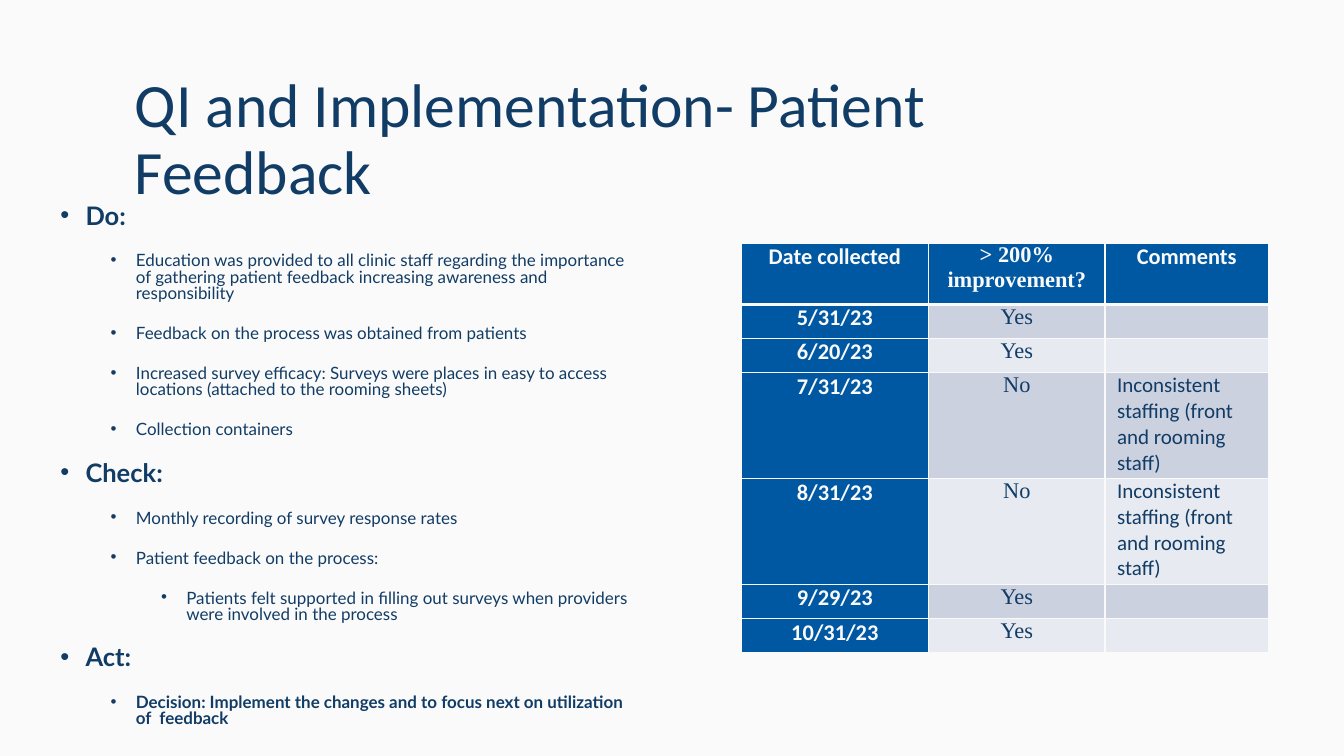
from lxml.etree import SubElement
from pptx import Presentation
from pptx.dml.color import RGBColor
from pptx.enum.text import MSO_ANCHOR as Anchor, PP_ALIGN as Align
from pptx.oxml.ns import qn
from pptx.util import Inches, Pt

NAVY, BLUE, PAPER = "113C66", "0058A3", "FAFAFA"
BANDS = ["CCD1E0", "E7EAF0"]
SANS, BODY, SERIF = "Calibri", "Lato", "Times New Roman"

TITLE = "QI and Implementation- Patient Feedback"
POINTS = [
    (1, "Do:", True),
    (2, "Education was provided to all clinic staff regarding the importance "
        "of gathering patient feedback increasing awareness and responsibility", False),
    (2, "Feedback on the process was obtained from patients", False),
    (2, "Increased survey efficacy: Surveys were places in easy to access "
        "locations (attached to the rooming sheets)", False),
    (2, "Collection containers", False),
    (1, "Check:", True),
    (2, "Monthly recording of survey response rates", False),
    (2, "Patient feedback on the process:", False),
    (3, "Patients felt supported in filling out surveys when providers were "
        "involved in the process", False),
    (1, "Act:", True),
    (2, "Decision: Implement the changes and to focus next on utilization of  feedback", True),
]
STAFFING = "Inconsistent staffing (front and rooming staff)"
ROWS = [
    ("Date collected", "> 200% improvement?", "Comments"),
    ("5/31/23", "Yes", ""),
    ("6/20/23", "Yes", ""),
    ("7/31/23", "No", STAFFING),
    ("8/31/23", "No", STAFFING),
    ("9/29/23", "Yes", ""),
    ("10/31/23", "Yes", ""),
]
COLUMNS = [1.86, 1.75, 1.62]
HEAD, SHORT, TALL = 0.61, 0.34, 1.05


def color(value):
    return RGBColor.from_string(value)


def style(p, size, font, shade, bold=False):
    for r in p.runs:
        r.font.size, r.font.name, r.font.bold = Pt(size), font, bold
        r.font.color.rgb = color(shade)


def add_box(s, *place):
    tf = s.shapes.add_textbox(*map(Inches, place)).text_frame
    tf.word_wrap = True
    return tf


def add_title(s):
    tf = add_box(s, 1.24, 0.67, 10.27, 1.46)
    tf.vertical_anchor = Anchor.MIDDLE
    tf.text = TITLE
    tf.paragraphs[0].line_spacing = 0.9
    style(tf.paragraphs[0], 44, SANS, NAVY)


def add_points(s):
    tf = add_box(s, 0, 1.99, 6.33, 5.51)
    for i, (level, text, bold) in enumerate(POINTS):
        p = tf.add_paragraph() if i else tf.paragraphs[0]
        p.text = text
        p.level = level
        pPr = p._p.get_or_add_pPr()
        pPr.set("marL", str(Inches(0.25 + level / 2)))
        pPr.set("indent", str(Inches(-0.25)))
        SubElement(pPr, qn("a:buFont"), typeface="Arial")
        SubElement(pPr, qn("a:buChar"), char="•")
        p.line_spacing = 0.8
        p.space_before = Pt(5 if i else 0)
        p.space_after = Pt(12)
        style(p, 18.2 if level == 1 else 12.1, BODY, NAVY, bold)


def add_borders(cell, bottom):
    tcPr = cell._tc.get_or_add_tcPr()
    for side, width in (("L", 1), ("R", 1), ("T", 1), ("B", bottom)):
        ln = SubElement(tcPr, qn(f"a:ln{side}"), w=str(Pt(width)))
        SubElement(SubElement(ln, qn("a:solidFill")), qn("a:srgbClr"), val=PAPER)


def fill_cell(cell, text, row, col):
    strong = row == 0 or col == 0
    comment = row > 0 and col == 2
    cell.margin_left = cell.margin_right = Inches(0.12)
    cell.margin_top = cell.margin_bottom = 0
    add_borders(cell, 3 if row == 0 else 1)
    cell.fill.solid()
    cell.fill.fore_color.rgb = color(BLUE if strong else BANDS[(row - 1) % 2])
    cell.text = text
    p = cell.text_frame.paragraphs[0]
    p.alignment = Align.LEFT if comment else Align.CENTER
    style(p, 15 if comment else 16, SERIF if col == 1 else SANS,
          PAPER if strong else NAVY, strong)


def add_results(s):
    heights = [HEAD] + [TALL if row[2] else SHORT for row in ROWS[1:]]
    place = 7.35, 2.41, sum(COLUMNS), sum(heights)
    table = s.shapes.add_table(len(ROWS), len(COLUMNS), *map(Inches, place)).table
    for column, width in zip(table.columns, COLUMNS):
        column.width = Inches(width)
    for i, (row, height) in enumerate(zip(ROWS, heights)):
        table.rows[i].height = Inches(height)
        for j, text in enumerate(row):
            fill_cell(table.cell(i, j), text, i, j)


def main():
    """Build the patient feedback slide."""
    prs = Presentation()
    prs.slide_width, prs.slide_height = Inches(13.33), Inches(7.5)
    s = prs.slides.add_slide(prs.slide_layouts[6])
    s.background.fill.solid()
    s.background.fill.fore_color.rgb = color(PAPER)
    add_title(s)
    add_points(s)
    add_results(s)
    prs.save("out.pptx")


if __name__ == "__main__":
    main()
